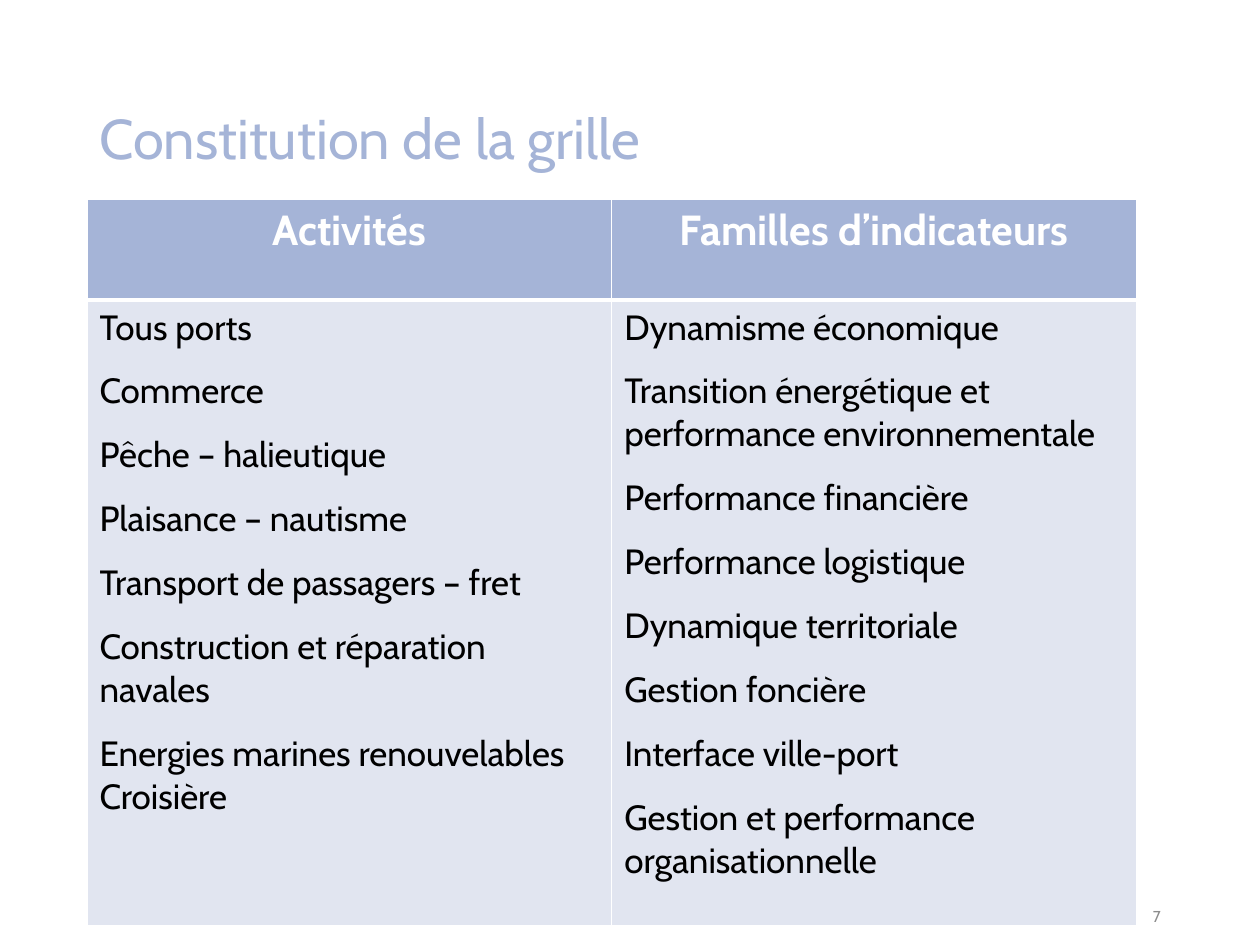
"""Build the slide that sets port activities beside indicator families."""
from dataclasses import dataclass

from lxml.etree import SubElement
from pptx import Presentation
from pptx.dml.color import RGBColor
from pptx.enum.text import MSO_ANCHOR, PP_ALIGN
from pptx.oxml.ns import qn
from pptx.util import Inches, Pt

TITLE = "Constitution de la grille"
PAGE_NUMBER = "7"
COLUMNS = {
    "Activités": [
        ["Tous ports"],
        ["Commerce"],
        ["Pêche – halieutique"],
        ["Plaisance – nautisme"],
        ["Transport de passagers – fret"],
        ["Construction et réparation navales"],
        ["Energies marines renouvelables", "Croisière"],
    ],
    "Familles d’indicateurs": [
        ["Dynamisme économique"],
        ["Transition énergétique et performance environnementale"],
        ["Performance financière"],
        ["Performance logistique"],
        ["Dynamique territoriale"],
        ["Gestion foncière"],
        ["Interface ville-port"],
        ["Gestion et performance organisationnelle"],
    ],
}


@dataclass(frozen=True)
class Theme:
    """Colours, font and point sizes of the slide."""
    font: str = "Cabin"
    accent: str = "A5B4D7"
    body_fill: str = "E1E5F0"
    white: str = "FFFFFF"
    black: str = "000000"
    grey: str = "8C8C8C"
    title_size: int = 32
    header_size: int = 24
    body_size: int = 20
    number_size: int = 9
    group_gap: float = 12.2
    thin_line: int = 1
    thick_line: int = 3


THEME = Theme()
SLIDE_WIDTH, SLIDE_HEIGHT = 10, 7.5
MARGIN = 0.69
CONTENT_WIDTH = SLIDE_WIDTH - 2 * MARGIN
TABLE_TOP, TABLE_WIDTH = 1.58, 8.33
ROW_HEIGHTS = [0.8, 4.97]


def write_text(frame, groups, size, color, bold=False, align=PP_ALIGN.LEFT, line_spacing=None):
    """Write groups of paragraphs, with a gap ahead of each group but the first."""
    lines = [(line, group_index > 0 and line_index == 0)
             for group_index, group in enumerate(groups)
             for line_index, line in enumerate(group)]
    for index, (line, starts_group) in enumerate(lines):
        paragraph = frame.add_paragraph() if index else frame.paragraphs[0]
        paragraph.alignment = align
        paragraph.line_spacing = line_spacing
        if starts_group:
            paragraph.space_before = Pt(THEME.group_gap)
        run = paragraph.add_run()
        run.text = line
        run.font.name = THEME.font
        run.font.size = Pt(size)
        run.font.bold = bold
        run.font.color.rgb = RGBColor.from_string(color)


def add_text_box(slide, left, top, width, height, text, **text_format):
    """Add a wrapped, vertically centred text box."""
    box = slide.shapes.add_textbox(*map(Inches, (left, top, width, height)))
    box.text_frame.word_wrap = True
    box.text_frame.vertical_anchor = MSO_ANCHOR.MIDDLE
    write_text(box.text_frame, [[text]], **text_format)


def style_cell(cell, fill, top, bottom):
    """Give a cell white borders and a solid fill."""
    properties = cell._tc.get_or_add_tcPr()
    widths = {"a:lnL": THEME.thin_line, "a:lnR": THEME.thin_line, "a:lnT": top, "a:lnB": bottom}
    for tag, width in widths.items():
        line = SubElement(properties, qn(tag), w=str(Pt(width)))
        SubElement(SubElement(line, qn("a:solidFill")), qn("a:srgbClr"), val=THEME.white)
    cell.fill.solid()
    cell.fill.fore_color.rgb = RGBColor.from_string(fill)


def add_grid(slide):
    """Add the table of headings and their lists."""
    table = slide.shapes.add_table(
        len(ROW_HEIGHTS), len(COLUMNS), Inches(MARGIN), Inches(TABLE_TOP),
        Inches(TABLE_WIDTH), Inches(sum(ROW_HEIGHTS))).table
    table.horz_banding = False
    for row, height in zip(table.rows, ROW_HEIGHTS):
        row.height = Inches(height)
    for index, (heading, groups) in enumerate(COLUMNS.items()):
        table.columns[index].width = Inches(TABLE_WIDTH / len(COLUMNS))
        header, body = table.cell(0, index), table.cell(1, index)
        style_cell(header, THEME.accent, THEME.thin_line, THEME.thick_line)
        style_cell(body, THEME.body_fill, THEME.thick_line, THEME.thin_line)
        write_text(header.text_frame, [[heading]], THEME.header_size, THEME.white,
                   bold=True, align=PP_ALIGN.CENTER)
        write_text(body.text_frame, groups, THEME.body_size, THEME.black)


def main():
    """Build and save the presentation."""
    presentation = Presentation()
    presentation.slide_width = Inches(SLIDE_WIDTH)
    presentation.slide_height = Inches(SLIDE_HEIGHT)
    slide = presentation.slides.add_slide(presentation.slide_layouts[6])
    add_text_box(slide, MARGIN, 0.4, CONTENT_WIDTH, 1.45, TITLE,
                 size=THEME.title_size, color=THEME.accent, line_spacing=0.9)
    number_width = 2.25
    add_text_box(slide, SLIDE_WIDTH - MARGIN - number_width, 7.17, number_width, 0.2, PAGE_NUMBER,
                 size=THEME.number_size, color=THEME.grey, align=PP_ALIGN.RIGHT)
    add_grid(slide)
    presentation.save("out.pptx")


if __name__ == "__main__":
    main()
